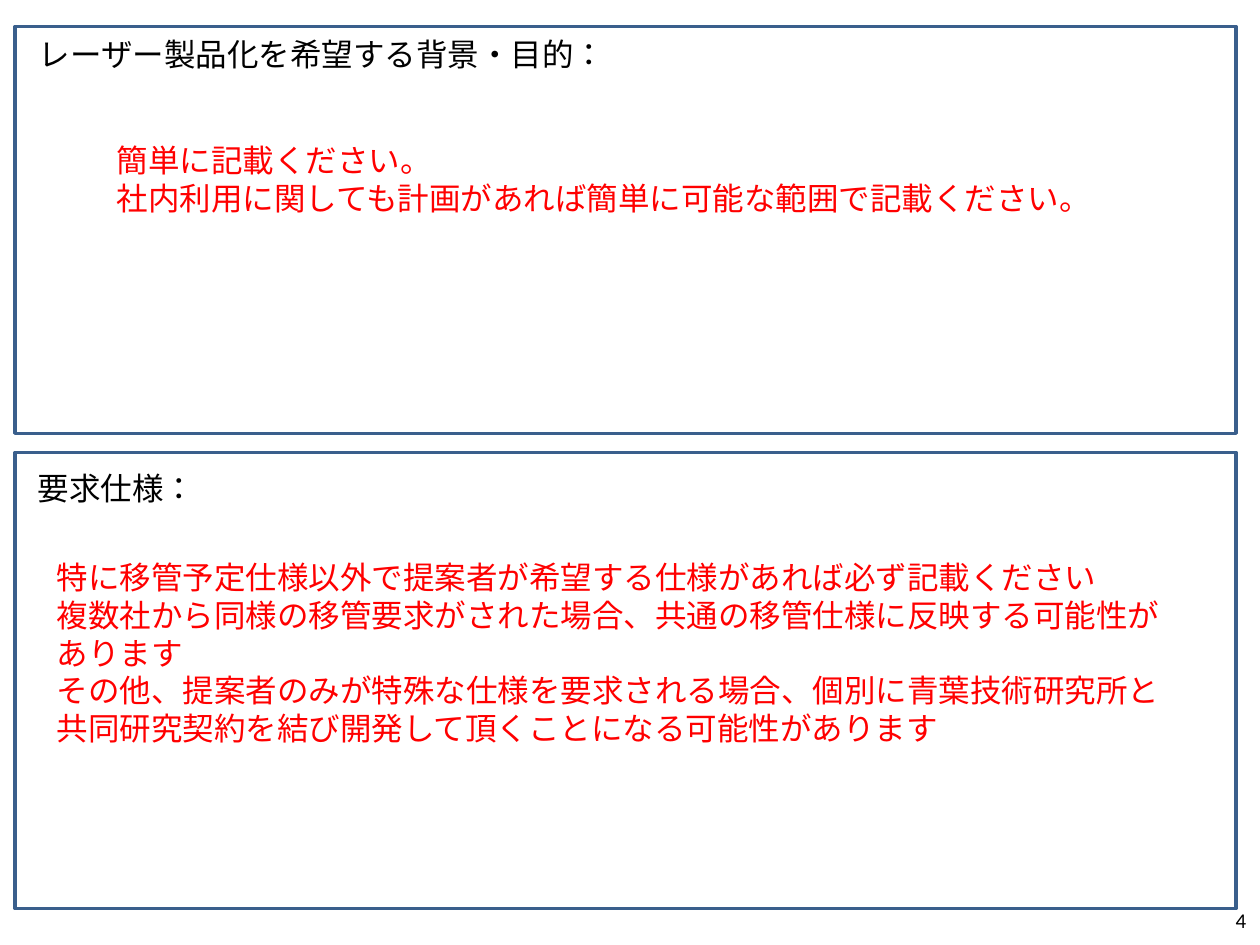
from lxml.etree import SubElement
from pptx import Presentation
from pptx.dml.color import RGBColor
from pptx.enum.lang import MSO_LANGUAGE_ID
from pptx.enum.shapes import MSO_SHAPE
from pptx.enum.text import MSO_ANCHOR, PP_ALIGN
from pptx.oxml.ns import qn
from pptx.util import Inches, Pt

JAPANESE = "Noto Sans CJK JP"
LATIN = "Calibri"
BLACK, RED, BLUE = "000000", "FF0000", "3A5F8C"
FRAME_LEFT, FRAME_WIDTH = 0.12, 9.69

BACKGROUND_GUIDE = [
    "簡単に記載ください。",
    "社内利用に関しても計画があれば簡単に可能な範囲で記載ください。",
]
REQUIREMENT_GUIDE = [
    "特に移管予定仕様以外で提案者が希望する仕様があれば必ず記載ください",
    "複数社から同様の移管要求がされた場合、共通の移管仕様に反映する可能性があります",
    "その他、提案者のみが特殊な仕様を要求される場合、個別に青葉技術研究所と"
    "共同研究契約を結び開発して頂くことになる可能性があります",
]


def color(hex_code):
    return RGBColor.from_string(hex_code)


def add_frame(slide, top, height):
    frame = slide.shapes.add_shape(
        MSO_SHAPE.RECTANGLE,
        *map(Inches, (FRAME_LEFT, top, FRAME_WIDTH, height)))
    frame.shadow.inherit = False
    frame.fill.background()
    frame.line.color.rgb = color(BLUE)
    frame.line.width = Pt(2)


def add_text(slide, box, lines, ink=BLACK, size=18, typeface=JAPANESE,
             align=PP_ALIGN.LEFT, anchor=MSO_ANCHOR.TOP):
    """Place one paragraph per line in box (left, top, width, height in inches)."""
    frame = slide.shapes.add_textbox(*map(Inches, box)).text_frame
    frame.word_wrap = True
    frame.vertical_anchor = anchor
    frame.text = "\n".join(lines)
    for paragraph in frame.paragraphs:
        paragraph.alignment = align
        font = paragraph.font
        font.size = Pt(size)
        font.color.rgb = color(ink)
        font.name = typeface
        font.language_id = MSO_LANGUAGE_ID.JAPANESE
        # East Asian glyphs take their typeface from a separate element
        properties = paragraph._p.pPr.find(qn("a:defRPr"))
        SubElement(properties, qn("a:ea"), typeface=typeface)


def main():
    deck = Presentation()
    deck.slide_width, deck.slide_height = Inches(10), Inches(7.5)
    slide = deck.slides.add_slide(deck.slide_layouts[6])

    add_frame(slide, 0.21, 3.23)
    add_text(slide, (0.21, 0.23, 4.85, 0.4), ["レーザー製品化を希望する背景・目的："])
    add_text(slide, (0.83, 1.07, 8.03, 1.01), BACKGROUND_GUIDE, RED)

    add_frame(slide, 3.59, 3.62)
    add_text(slide, (0.2, 3.67, 3.62, 0.4), ["要求仕様："])
    add_text(slide, (0.35, 4.38, 9.02, 1.62), REQUIREMENT_GUIDE, RED)

    add_text(slide, (7.66, 7.1, 2.33, 0.4), ["4"], size=12, typeface=LATIN,
             align=PP_ALIGN.RIGHT, anchor=MSO_ANCHOR.MIDDLE)
    deck.save("out.pptx")


if __name__ == "__main__":
    main()
